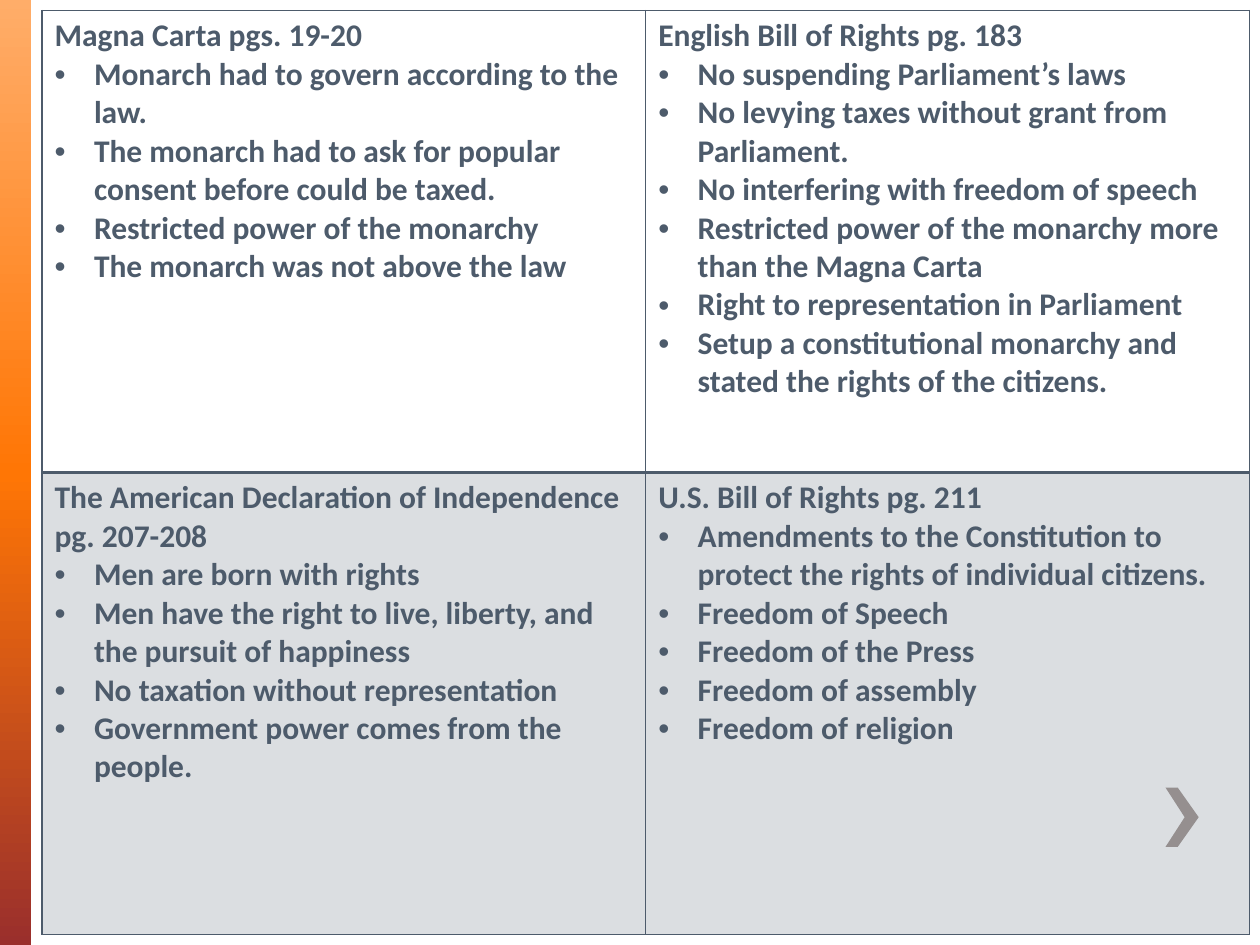
from lxml import etree
from pptx import Presentation
from pptx.dml.color import RGBColor
from pptx.enum.shapes import MSO_SHAPE
from pptx.oxml.ns import qn
from pptx.util import Pt

RECTANGLE = MSO_SHAPE.RECTANGLE
BLANK_LAYOUT = 6
COLORS = {
    "slate": "4D5B6B",
    "chevron": "A79D99",
    "light_orange": "FFAD69",
    "orange": "FF7605",
    "brick": "9A2F2C",
}
DOCUMENTS = [
    [
        ("Magna Carta pgs. 19-20", [
            "Monarch had to govern according to the law.",
            "The monarch had to ask for popular consent before could be taxed.",
            "Restricted power of the monarchy",
            "The monarch was not above the law",
        ]),
        ("English Bill of Rights pg. 183", [
            "No suspending Parliament’s laws",
            "No levying taxes without grant from Parliament.",
            "No interfering with freedom of speech",
            "Restricted power of the monarchy more than the Magna Carta",
            "Right to representation in Parliament",
            "Setup a constitutional monarchy and stated the rights of the citizens.",
        ]),
    ],
    [
        ("The American Declaration of Independence pg. 207-208", [
            "Men are born with rights",
            "Men have the right to live, liberty, and the pursuit of happiness",
            "No taxation without representation",
            "Government power comes from the people.",
        ]),
        ("U.S. Bill of Rights pg. 211", [
            "Amendments to the Constitution to protect the rights of individual citizens.",
            "Freedom of Speech",
            "Freedom of the Press",
            "Freedom of assembly",
            "Freedom of religion",
        ]),
    ],
]


def add_element(parent, tag, **attributes):
    values = {name: str(value) for name, value in attributes.items()}
    return etree.SubElement(parent, qn(tag), values)


def write_text(para, text, font="Calibri", size=18, color="slate", bold=True, bullet=None):
    span = para.add_run()
    span.text = text
    span.font.name = font
    span.font.size = Pt(size)
    span.font.bold = bold
    span.font.color.rgb = RGBColor.from_string(COLORS[color])
    if bullet:
        indent = Pt(22.5)
        properties = para._p.get_or_add_pPr()
        properties.set("marL", str(indent))
        properties.set("indent", str(-indent))
        add_element(properties, "a:buFont", typeface="Arial")
        add_element(properties, "a:buChar", char=bullet)


def set_borders(cell, **widths):
    """Draw cell borders; widths are points keyed by L, R, T and B, in that order."""
    properties = cell._tc.get_or_add_tcPr()
    for position, (side, width) in enumerate(widths.items()):
        line = add_element(properties, f"a:ln{side}", w=Pt(width))
        fill = add_element(line, "a:solidFill")
        add_element(fill, "a:srgbClr", val=COLORS["slate"])
        properties.insert(position, line)


class SlideBuilder:
    def __init__(self, slide, colors):
        self.shapes = slide.shapes
        self.colors = colors

    def paint(self, target, color, opacity=100):
        target.fill.solid()
        target.fill.fore_color.rgb = RGBColor.from_string(self.colors[color])
        if opacity < 100:
            for element in target._tc.tcPr.iter(qn("a:srgbClr")):
                add_element(element, "a:alpha", val=opacity * 1000)

    def gradient_bar(self, left, top, width, height, stops):
        bar = self.shapes.add_shape(RECTANGLE, Pt(left), Pt(top), Pt(width), Pt(height))
        bar.shadow.inherit = False
        bar.line.fill.background()
        bar.fill.gradient()
        gradient = bar._element.spPr.find(qn("a:gradFill"))
        for child in list(gradient):
            gradient.remove(child)
        stop_list = add_element(gradient, "a:gsLst")
        for position, color in stops:
            stop = add_element(stop_list, "a:gs", pos=position * 1000)
            add_element(stop, "a:srgbClr", val=self.colors[color])
        add_element(gradient, "a:lin", ang=90 * 60000, scaled=0)

    def outline(self, points, color):
        start, *others = points
        builder = self.shapes.build_freeform(*start, scale=Pt(1))
        builder.add_line_segments(others, close=True)
        shape = builder.convert_to_shape()
        shape.shadow.inherit = False
        shape.line.fill.background()
        self.paint(shape, color)

    def table(self, left, top, width, height, rows):
        frame = self.shapes.add_table(len(rows), len(rows[0]),
                                      Pt(left), Pt(top), Pt(width), Pt(height))
        table = frame.table
        table.first_row = False
        table.horz_banding = False
        for row_index, row in enumerate(rows):
            for column_index, (heading, points) in enumerate(row):
                cell = table.cell(row_index, column_index)
                self.fill_cell(cell, heading, points)
                if row_index == 0:
                    cell.fill.background()
                    set_borders(cell, L=1, R=1, T=1, B=2)
                else:
                    self.paint(cell, "slate", opacity=20)
                    set_borders(cell, L=1, R=1, T=2, B=1)

    def fill_cell(self, cell, heading, points):
        write_text(cell.text_frame.paragraphs[0], heading)
        for point in points:
            write_text(cell.text_frame.add_paragraph(), point, bullet="•")


def main():
    deck = Presentation()
    deck.slide_width, deck.slide_height = Pt(720), Pt(540)
    page = SlideBuilder(deck.slides.add_slide(deck.slide_layouts[BLANK_LAYOUT]), COLORS)
    page.gradient_bar(0, 0, 18, 540, [(0, "light_orange"), (50, "orange"), (100, "brick")])
    page.outline([(673, 450), (665.5, 450), (677, 467), (665.5, 484), (673, 484), (685, 467)],
                 "chevron")
    page.table(24, 6, 690, 528, DOCUMENTS)
    deck.save("out.pptx")


if __name__ == "__main__":
    main()
